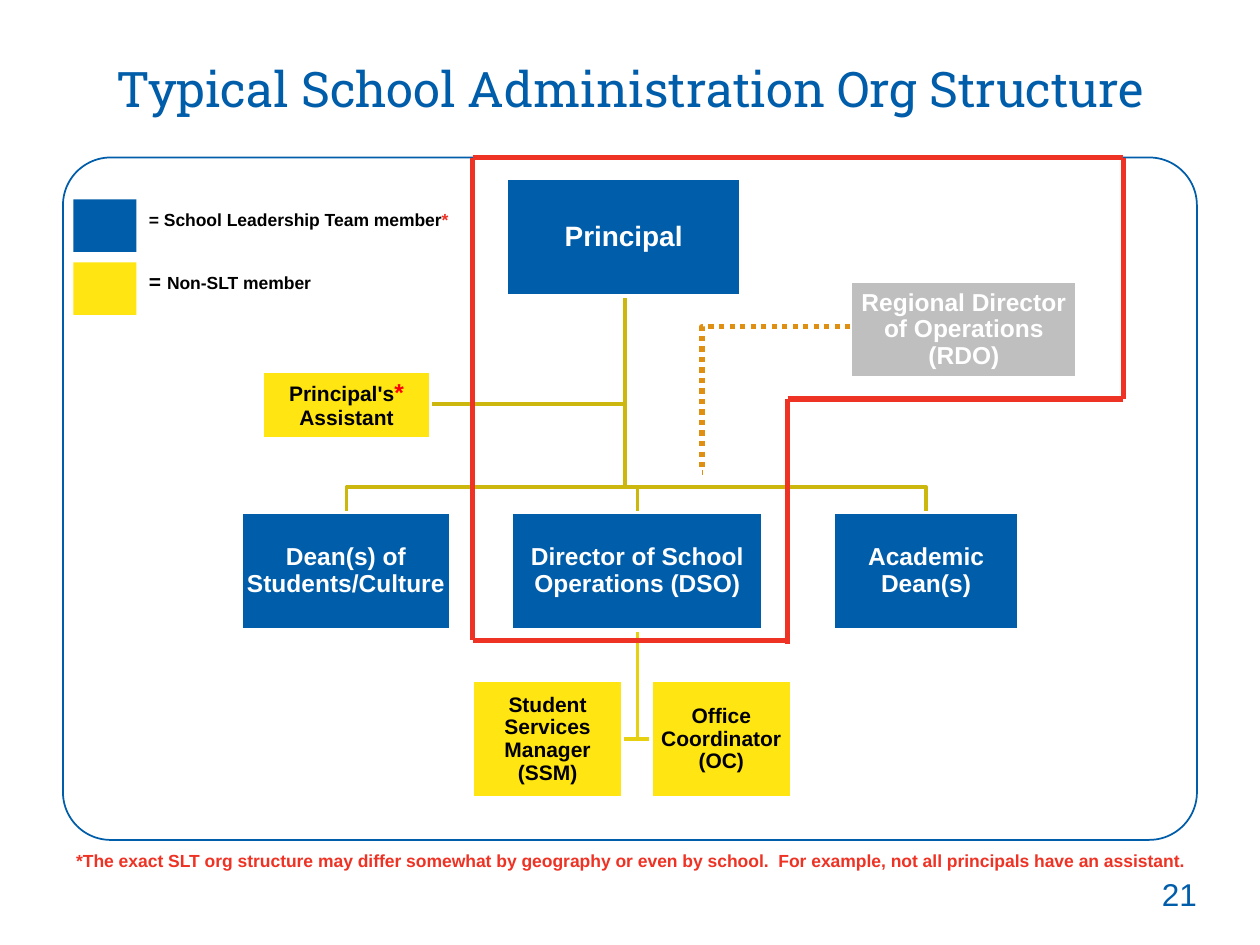
from lxml.etree import SubElement
from pptx import Presentation
from pptx.dml.color import RGBColor
from pptx.enum.dml import MSO_LINE
from pptx.enum.shapes import MSO_CONNECTOR, MSO_SHAPE
from pptx.enum.text import MSO_ANCHOR, MSO_AUTO_SIZE, PP_ALIGN
from pptx.oxml.ns import qn
from pptx.util import Inches, Pt

BLUE, YELLOW, GRAY, RED = "005DAA", "FFE512", "BFBFBF", "EE3224"
OLIVE, GOLD, ORANGE = "CCB70E", "E7D010", "DF8F11"
WHITE, BLACK = "FFFFFF", "000000"
COLUMNS, ROWS = 120, 90


def color(value):
    return RGBColor.from_string(value)


def write(p, text, size=12, fill=BLACK, bold=True, font="Arial"):
    r = p.add_run()
    r.text = text
    r.font.name, r.font.size, r.font.bold = font, Pt(size), bold
    r.font.color.rgb = color(fill)


class OrgSlide:
    """One slide on a grid of 120 columns by 90 rows."""

    def __init__(self, prs):
        self.s = prs.slides.add_slide(prs.slide_layouts[5])
        self.col = prs.slide_width / COLUMNS
        self.row = prs.slide_height / ROWS

    def at(self, x, y):
        return round(x * self.col), round(y * self.row)

    def fill_text(self, tf, runs, align, anchor, inset, spacing=None):
        tf.word_wrap, tf.auto_size = True, MSO_AUTO_SIZE.NONE
        tf.vertical_anchor = anchor
        tf.margin_left, tf.margin_top, tf.margin_right, tf.margin_bottom = map(Inches, inset)
        p = tf.paragraphs[0]
        p.alignment, p.line_spacing = align, spacing
        for text, style in runs:
            write(p, text, **style)

    def title(self, text):
        sp = self.s.shapes.title
        sp.left, sp.top = self.at(0, 5)
        sp.width, sp.height = self.at(COLUMNS, 8)
        style = dict(size=28, fill=BLUE, bold=False, font="Roboto Slab")
        self.fill_text(sp.text_frame, [(text, style)], PP_ALIGN.CENTER,
                       MSO_ANCHOR.TOP, (0, 0.05, 0, 0.05))

    def text(self, x, y, w, h, runs, align=PP_ALIGN.LEFT, anchor=MSO_ANCHOR.TOP, right=0.1):
        sp = self.s.shapes.add_textbox(*self.at(x, y), *self.at(w, h))
        self.fill_text(sp.text_frame, runs, align, anchor, (0.1, 0.05, right, 0.05))

    def shape(self, x, y, w, h, fill=None, line=None, width=1, kind=MSO_SHAPE.RECTANGLE):
        sp = self.s.shapes.add_shape(kind, *self.at(x, y), *self.at(w, h))
        sp.shadow.inherit = False
        if fill:
            sp.fill.solid()
            sp.fill.fore_color.rgb = color(fill)
        else:
            sp.fill.background()
        if line:
            sp.line.color.rgb, sp.line.width = color(line), Pt(width)
        else:
            sp.line.fill.background()
        return sp

    def box(self, x, y, w, h, fill, *runs):
        sp = self.shape(x, y, w, h, fill, WHITE, 2)
        self.fill_text(sp.text_frame, runs, PP_ALIGN.CENTER, MSO_ANCHOR.MIDDLE,
                       (0.01,) * 4, 0.9)

    def branch(self, line, *points):
        start, *rest = [self.at(*point) for point in points]
        builder = self.s.shapes.build_freeform(*start)
        builder.add_line_segments(rest, close=False)
        sp = builder.convert_to_shape()
        sp.shadow.inherit = False
        sp.fill.background()
        sp.line.color.rgb, sp.line.width = color(line), Pt(2)

    def connector(self, start, end, line, kind=MSO_CONNECTOR.STRAIGHT):
        c = self.s.shapes.add_connector(kind, *self.at(*start), *self.at(*end))
        c.line.color.rgb, c.line.width = color(line), Pt(3)
        SubElement(c._element.spPr, qn("a:effectLst"))
        return c

    def dotted_elbow(self, start, end, line, bend):
        c = self.connector(start, end, line, MSO_CONNECTOR.ELBOW)
        c.line.dash_style = MSO_LINE.ROUND_DOT
        guides = c._element.spPr.prstGeom.get_or_add_avLst()
        SubElement(guides, qn("a:gd"), name="adj1", fmla=f"val {round(bend * 100000)}")


def main():
    prs = Presentation()
    prs.slide_width, prs.slide_height = Inches(10), Inches(7.5)
    org = OrgSlide(prs)

    # Frame, title and page number
    frame = org.shape(6, 15, 108, 65, line=BLUE, kind=MSO_SHAPE.ROUNDED_RECTANGLE)
    frame.adjustments[0] = 0.07
    org.title("Typical School Administration Org Structure")
    org.text(86, 82, 28, 6.2, [("21", dict(size=18, fill=BLUE, bold=False))],
             PP_ALIGN.RIGHT, MSO_ANCHOR.MIDDLE, right=0)

    # Reporting lines
    principal_x, dso_x = 59.5, 60.7
    principal_bottom, bar_y, team_y = 28.2, 46.4, 48.8
    staff_top, staff_mid = 60.1, 70.4
    org.branch(OLIVE, (principal_x, principal_bottom), (principal_x, 38.5), (40.9, 38.5))
    for x in (88.2, dso_x, 33):
        org.branch(OLIVE, (principal_x, principal_bottom), (principal_x, bar_y),
                   (x, bar_y), (x, team_y))
    for x in (62, 59.3):
        org.branch(GOLD, (dso_x, staff_top), (dso_x, staff_mid), (x, staff_mid))

    # Position boxes
    lead, staff = dict(size=14, fill=WHITE), dict(size=12)
    org.box(48.2, 17, 22.4, 11.2, BLUE, ("Principal", dict(size=16, fill=WHITE)))
    for x, w, name in ((23, 19.9, "Dean(s) of Students/Culture"),
                       (48.7, 24, "Director of School Operations (DSO)"),
                       (79.4, 17.6, "Academic Dean(s)")):
        org.box(x, team_y, w, 11.2, BLUE, (name, lead))
    for x, w, name in ((45, 14.3, "Student Services Manager (SSM)"),
                       (62, 13.4, "Office Coordinator (OC)")):
        org.box(x, 64.8, w, 11.2, YELLOW, (name, staff))
    org.box(25, 35.4, 16, 6.4, YELLOW, ("Principal's", staff),
            ("*", dict(size=14, fill="FF0000")), (" Assistant", staff))
    org.box(81, 26.8, 21.6, 9.2, GRAY, ("Regional Director of Operations (RDO)", lead))

    # Footnote
    org.text(0, 80.4, COLUMNS, 3.2, [(
        "*The exact SLT org structure may differ somewhat by geography or even by school.  "
        "For example, not all principals have an assistant.", dict(size=10, fill=RED))],
        PP_ALIGN.CENTER)

    # Dotted line to the regional director
    org.dotted_elbow((81, 31.1), (67, 45), ORANGE, 1.01)

    # Red outline around the operations chain
    left, middle, right, top, step, bottom = 45, 75, 107, 15, 38, 61
    for start, end in (((left, top), (left, bottom)),
                       ((left, top), (right, top)),
                       ((left, bottom), (middle, bottom)),
                       ((middle, step), (middle, bottom + 0.3)),
                       ((middle, step), (right, step)),
                       ((right, top), (right, step))):
        org.connector(start, end, RED)

    # Legend
    small = dict(size=10)
    for y, fill in ((19, BLUE), (25, YELLOW)):
        org.shape(7, y, 6, 5, fill)
    org.text(13, 19.3, 35, 3.2, [("= School Leadership Team member", small),
                                 ("*", dict(size=10, fill=RED))])
    org.text(13, 25, 22, 3.6, [("= ", staff), ("Non-SLT member", small)])

    prs.save("out.pptx")


if __name__ == "__main__":
    main()
